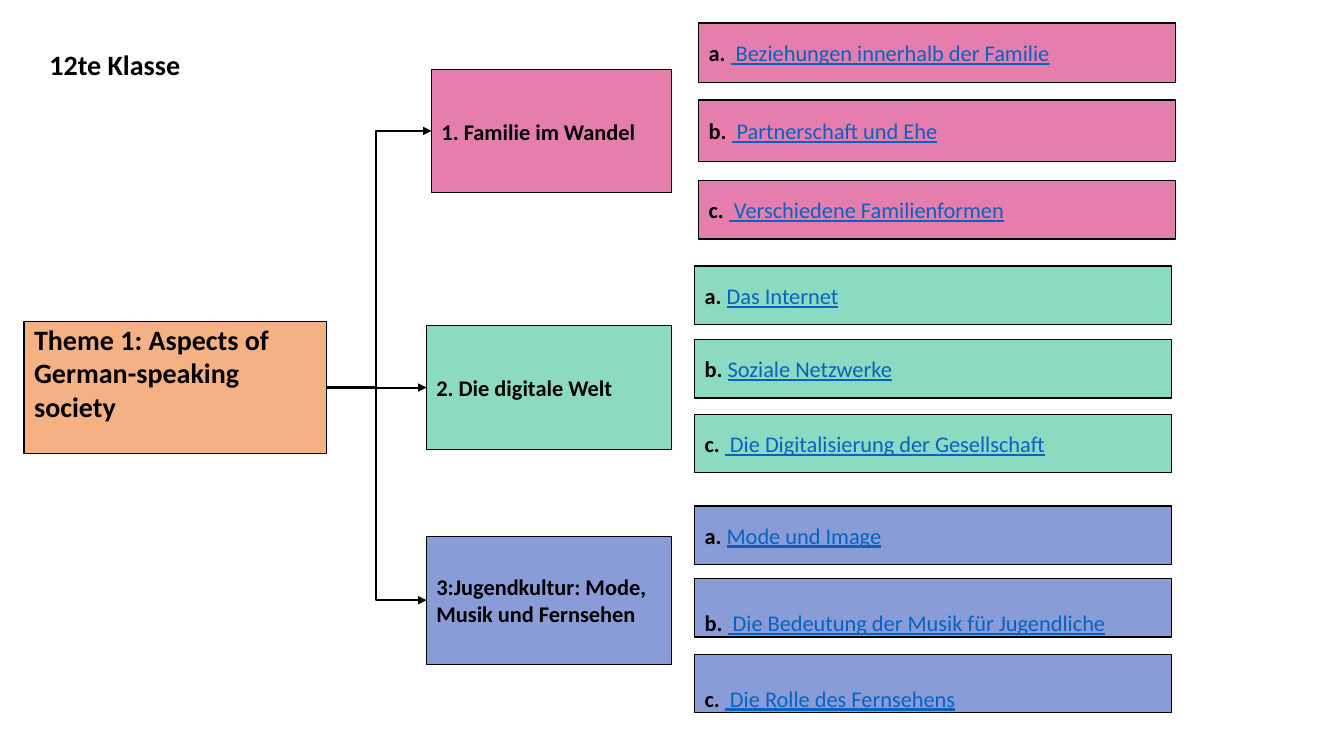
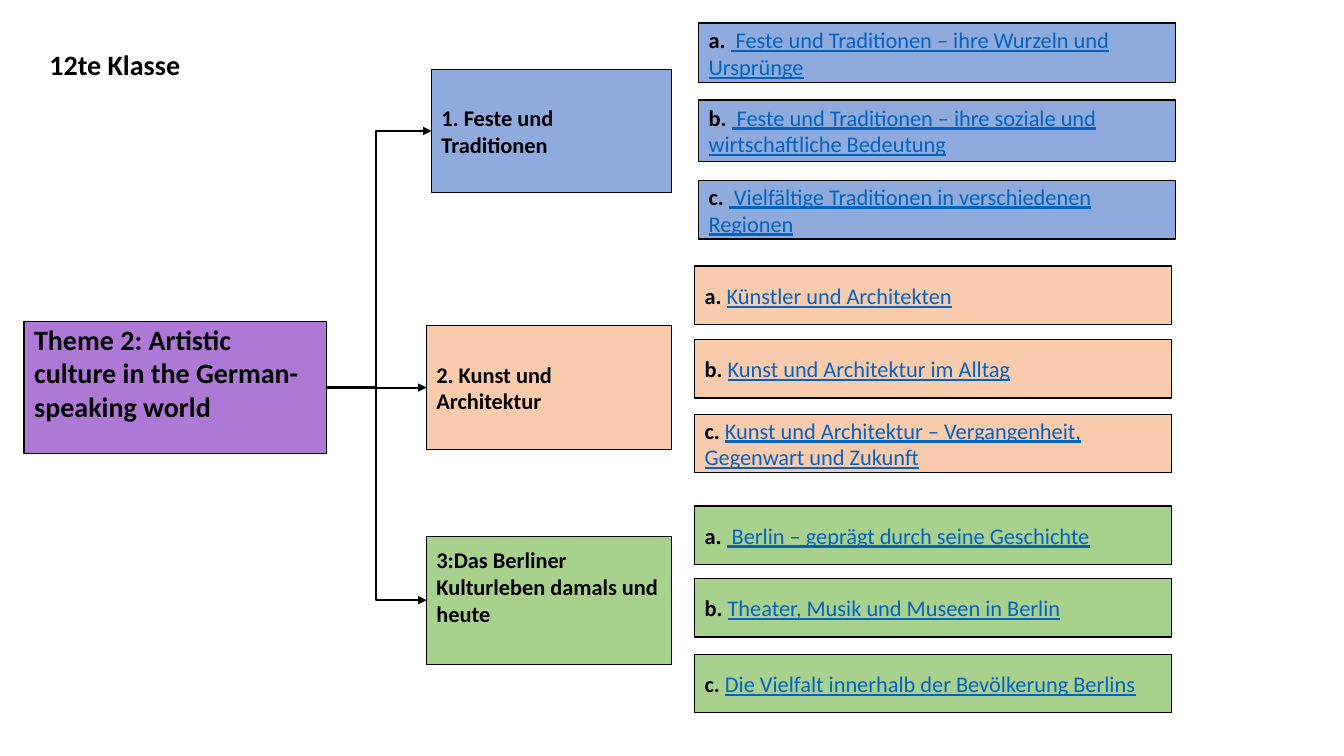
from lxml import etree
from pptx import Presentation
from pptx.dml.color import RGBColor
from pptx.enum import shapes, text
from pptx.oxml.ns import qn
from pptx.util import Inches, Pt

FONT = "Calibri"
COLORS = {
    "ink": "000000", "link": "0563C1",
    "orange": "F4B183", "pink": "E67EAD", "mint": "8CDAC2", "indigo": "899CD7",
    "purple": "AE78D6", "blue": "8FAADC", "peach": "F8CBAD", "green": "A9D18E",
}
THEME_BOX = (0.24, 3.19, 3, 1.31)
TRUNK_X = 3.73
ITEM_WIDTH = 4.73
GROUPS = [
    {"box": (4.28, 0.69, 2.38, 1.22), "left": 6.93,
     "rows": [(0.23, 0.59), (0.99, 0.61), (1.79, 0.58)]},
    {"box": (4.23, 3.23, 2.43, 1.23), "left": 6.89,
     "rows": [(2.64, 0.58), (3.37, 0.58), (4.11, 0.58)]},
    {"box": (4.23, 5.32, 2.43, 1.27), "left": 6.89,
     "rows": [(5.02, 0.58), (5.74, 0.58), (6.49, 0.58)]},
]
CENTRED = (0.05, 0.05)
LOWERED = (0.3, 0.01)
THEME_RAISED = (0, 0.3)
TOPIC_RAISED = (0.05, 0.32)

THEMES = [
    ("Theme 1: Aspects of German-speaking society", "orange", [
        ("1. Familie im Wandel", "pink", CENTRED, [
            (" Beziehungen innerhalb der Familie", CENTRED),
            (" Partnerschaft und Ehe", CENTRED),
            (" Verschiedene Familienformen", CENTRED)]),
        ("2. Die digitale Welt", "mint", CENTRED, [
            ("Das Internet", CENTRED),
            ("Soziale Netzwerke", CENTRED),
            (" Die Digitalisierung der Gesellschaft", CENTRED)]),
        ("3:Jugendkultur: Mode, Musik und Fernsehen", "indigo", CENTRED, [
            ("Mode und Image", CENTRED),
            (" Die Bedeutung der Musik für Jugendliche", LOWERED),
            (" Die Rolle des Fernsehens", LOWERED)]),
    ]),
    ("Theme 2: Artistic culture in the German-speaking world", "purple", [
        ("1. Feste und Traditionen", "blue", CENTRED, [
            (" Feste und Traditionen – ihre Wurzeln und Ursprünge", CENTRED),
            (" Feste und Traditionen – ihre soziale und wirtschaftliche Bedeutung", CENTRED),
            (" Vielfältige Traditionen in verschiedenen Regionen", CENTRED)]),
        ("2. Kunst und Architektur", "peach", CENTRED, [
            ("Künstler und Architekten", CENTRED),
            ("Kunst und Architektur im Alltag", CENTRED),
            ("Kunst und Architektur – Vergangenheit, Gegenwart und Zukunft", CENTRED)]),
        ("3:Das Berliner Kulturleben damals und heute", "green", TOPIC_RAISED, [
            (" Berlin – geprägt durch seine Geschichte", CENTRED),
            ("Theater, Musik und Museen in Berlin", CENTRED),
            ("Die Vielfalt innerhalb der Bevölkerung Berlins", CENTRED)]),
    ]),
]


def style_font(font, size, bold=True, color="ink"):
    font.name = FONT
    font.size = Pt(size)
    font.bold = bold
    font.color.rgb = RGBColor.from_string(COLORS[color])


def add_box(slide, place, fill, label, size, insets, link=None):
    shape = slide.shapes.add_shape(
        shapes.MSO_SHAPE.RECTANGLE, *[Inches(length) for length in place])
    shape.shadow.inherit = False
    shape.fill.solid()
    shape.fill.fore_color.rgb = RGBColor.from_string(COLORS[fill])
    shape.line.color.rgb = RGBColor.from_string(COLORS["ink"])
    shape.line.width = Pt(1)
    frame = shape.text_frame
    frame.word_wrap = True
    frame.vertical_anchor = text.MSO_ANCHOR.MIDDLE
    frame.margin_top, frame.margin_bottom = [Inches(inset) for inset in insets]
    paragraph = frame.paragraphs[0]
    paragraph.alignment = text.PP_ALIGN.LEFT
    label_run = paragraph.add_run()
    label_run.text = label
    style_font(label_run.font, size)
    if link:
        link_run = paragraph.add_run()
        link_run.text = link
        style_font(link_run.font, size, False, "link")
        link_run.font.underline = True
    return shape


presentation = Presentation()
presentation.slide_width = Inches(13.33)
presentation.slide_height = Inches(7.5)

for theme, theme_fill, topics in THEMES:
    slide = presentation.slides.add_slide(presentation.slide_layouts[5])
    title = slide.shapes.title
    title.left, title.top = Inches(0.39), Inches(0.42)
    title.width, title.height = Inches(2), Inches(0.44)
    title.text_frame.text = "12te Klasse"
    title.text_frame.auto_size = text.MSO_AUTO_SIZE.NONE
    title_paragraph = title.text_frame.paragraphs[0]
    title_paragraph.alignment = text.PP_ALIGN.LEFT
    style_font(title_paragraph.font, 20)

    theme_box = add_box(slide, THEME_BOX, theme_fill, theme, 20, THEME_RAISED)
    start_x = THEME_BOX[0] + THEME_BOX[2]
    start_y = THEME_BOX[1] + THEME_BOX[3] / 2

    for group, (topic, fill, insets, items) in zip(GROUPS, topics):
        left, top, width, height = group["box"]
        topic_box = add_box(slide, group["box"], fill, topic, 16, insets)
        for letter, (item, item_insets), (row_top, row_height) in zip("abc", items, group["rows"]):
            add_box(slide, (group["left"], row_top, ITEM_WIDTH, row_height),
                    fill, f"{letter}. ", 16, item_insets, item)

        end_y = top + height / 2
        is_level = abs(end_y - start_y) < 0.01
        kind = shapes.MSO_CONNECTOR.STRAIGHT if is_level else shapes.MSO_CONNECTOR.ELBOW
        connector = slide.shapes.add_connector(
            kind, Inches(start_x), Inches(start_y), Inches(left), Inches(end_y))
        connector.begin_connect(theme_box, 3)
        connector.end_connect(topic_box, 1)
        connector.line.color.rgb = RGBColor.from_string(COLORS["ink"])
        connector.line.width = Pt(1.5)
        properties = connector._element.spPr
        etree.SubElement(properties.find(qn("a:ln")), qn("a:tailEnd"), type="triangle")
        etree.SubElement(properties, qn("a:effectLst"))
        if not is_level:
            bend = round((TRUNK_X - start_x) / (left - start_x) * 100000)
            adjustments = properties.find(qn("a:prstGeom")).find(qn("a:avLst"))
            etree.SubElement(adjustments, qn("a:gd"), name="adj1", fmla=f"val {bend}")

presentation.save("out.pptx")
